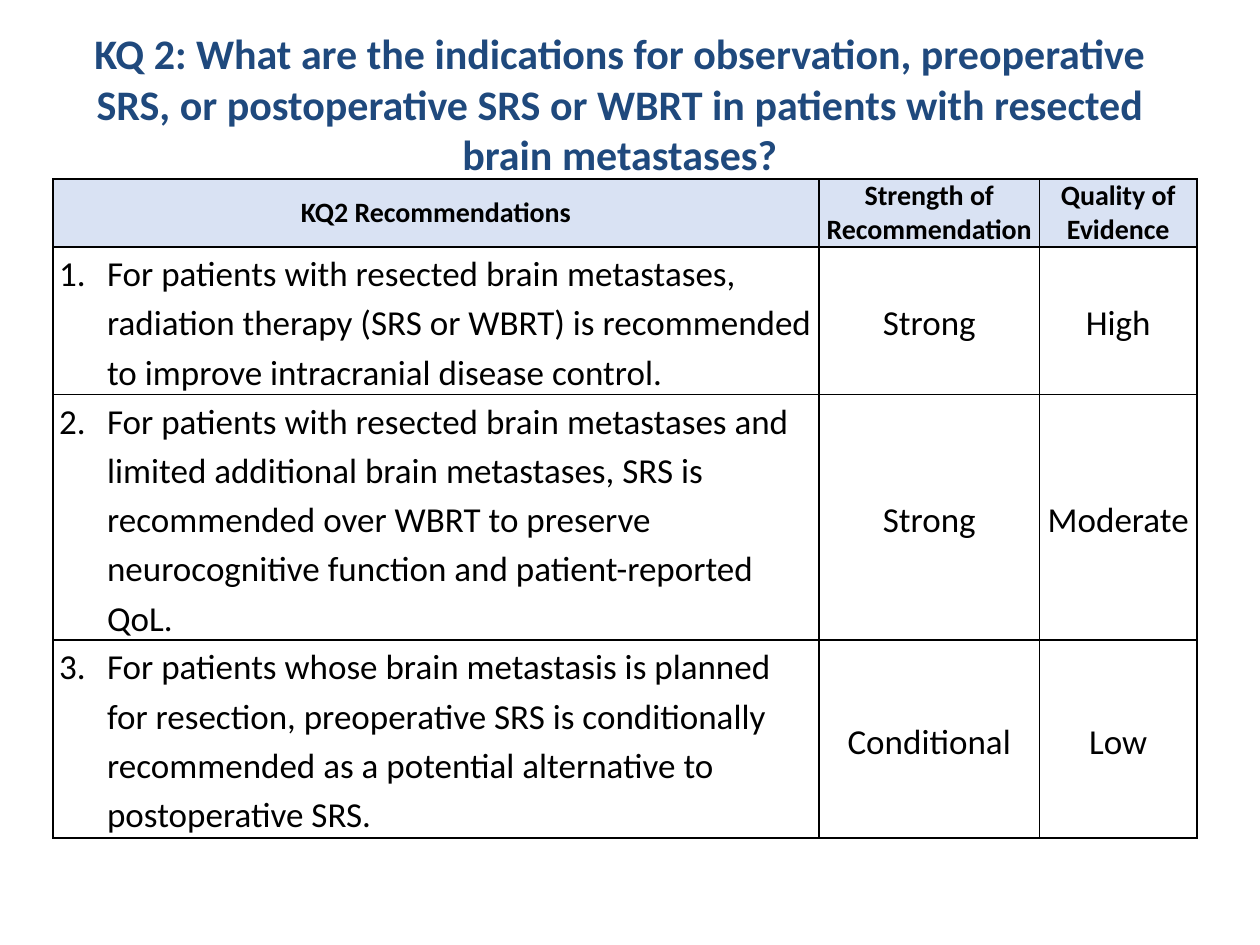
from lxml.etree import SubElement
from pptx import Presentation
from pptx.dml.color import RGBColor
from pptx.enum.text import MSO_ANCHOR, PP_ALIGN
from pptx.oxml.ns import qn
from pptx.util import Inches, Pt

NAVY = RGBColor(0x1F, 0x49, 0x7D)
BLACK = RGBColor(0, 0, 0)
WHITE = RGBColor(0xFF, 0xFF, 0xFF)
PALE_BLUE = RGBColor(0xD9, 0xE2, 0xF3)

TITLE = (
    "KQ 2: What are the indications for observation, preoperative SRS, "
    "or postoperative SRS or WBRT in patients with resected brain metastases?"
)
HEADINGS = ("KQ2 Recommendations", "Strength of Recommendation", "Quality of Evidence")
RECOMMENDATIONS = [
    ("For patients with resected brain metastases, radiation therapy (SRS or WBRT) "
     "is recommended to improve intracranial disease control.", "Strong", "High"),
    ("For patients with resected brain metastases and limited additional brain "
     "metastases, SRS is recommended over WBRT to preserve neurocognitive function "
     "and patient-reported QoL.", "Strong", "Moderate"),
    ("For patients whose brain metastasis is planned for resection, preoperative SRS "
     "is conditionally recommended as a potential alternative to postoperative SRS.",
     "Conditional", "Low"),
]
COLUMN_WIDTHS = (6.08, 1.75, 1.25)
ROW_HEIGHTS = (0.54, 1.17, 1.95, 1.57)


class SlideBuilder:
    font_name = "Calibri"
    hanging_indent = Inches(0.38)

    def __init__(self, slide):
        self.slide = slide

    def style(self, paragraph, size, color=BLACK, bold=False):
        paragraph.font.name = self.font_name
        paragraph.font.size = Pt(size)
        paragraph.font.bold = bold
        paragraph.font.color.rgb = color

    def title(self, text, left, top, width, height):
        shape = self.slide.shapes.add_textbox(
            Inches(left), Inches(top), Inches(width), Inches(height))
        shape.text_frame.word_wrap = True
        paragraph = shape.text_frame.paragraphs[0]
        paragraph.text = text
        paragraph.alignment = PP_ALIGN.CENTER
        self.style(paragraph, 24, NAVY, bold=True)

    def number(self, paragraph, position):
        properties = paragraph._p.get_or_add_pPr()
        properties.set("marL", str(self.hanging_indent))
        properties.set("indent", str(-self.hanging_indent))
        SubElement(properties, qn("a:buFont"), typeface="+mj-lt")
        SubElement(properties, qn("a:buAutoNum"), type="arabicPeriod", startAt=str(position))

    def borders(self, cell):
        properties = cell._tc.get_or_add_tcPr()
        for side in ("a:lnL", "a:lnR", "a:lnT", "a:lnB"):
            line = SubElement(properties, qn(side), w=str(Pt(1)))
            fill = SubElement(line, qn("a:solidFill"))
            SubElement(fill, qn("a:srgbClr"), val=str(BLACK))

    def cell(self, cell, text, row, column):
        header = row == 0
        numbered = column == 0 and not header
        cell.margin_left = cell.margin_right = Inches(0.05)
        cell.margin_top = cell.margin_bottom = 0
        cell.vertical_anchor = MSO_ANCHOR.TOP if numbered else MSO_ANCHOR.MIDDLE
        self.borders(cell)
        cell.fill.solid()
        cell.fill.fore_color.rgb = PALE_BLUE if header else WHITE
        paragraph = cell.text_frame.paragraphs[0]
        paragraph.text = text
        paragraph.alignment = PP_ALIGN.LEFT if numbered else PP_ALIGN.CENTER
        if not header:
            paragraph.line_spacing = 1.15
        if numbered:
            self.number(paragraph, row)
        self.style(paragraph, 16 if header else 20, bold=header)

    def table(self, rows, left, top, widths, heights):
        table = self.slide.shapes.add_table(
            len(rows), len(widths), Inches(left), Inches(top),
            Inches(sum(widths)), Inches(sum(heights))).table
        for column, width in zip(table.columns, widths):
            column.width = Inches(width)
        for row, height in zip(table.rows, heights):
            row.height = Inches(height)
        for row, texts in enumerate(rows):
            for column, text in enumerate(texts):
                self.cell(table.cell(row, column), text, row, column)


def main():
    presentation = Presentation()
    presentation.slide_width = Inches(10)
    presentation.slide_height = Inches(7.5)
    builder = SlideBuilder(presentation.slides.add_slide(presentation.slide_layouts[6]))
    builder.title(TITLE, 0.42, 0.17, 9, 0.92)
    builder.table([HEADINGS, *RECOMMENDATIONS], 0.42, 1.42, COLUMN_WIDTHS, ROW_HEIGHTS)
    presentation.save("out.pptx")


if __name__ == "__main__":
    main()
